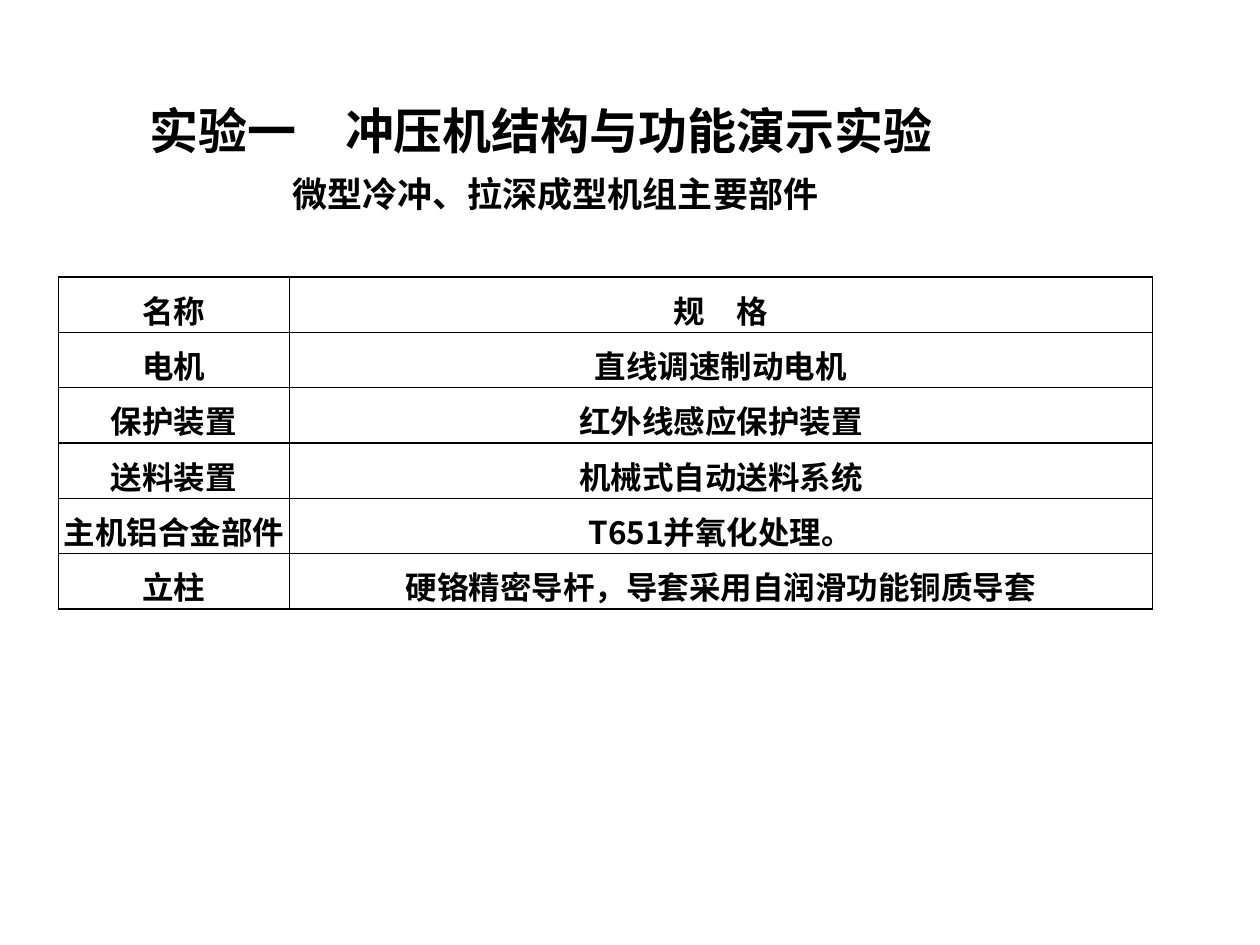
import pptx
import pptx.util
import pptx.dml.color
import pptx.enum.text
import pptx.oxml
import pptx.oxml.ns

Pt = pptx.util.Pt
FONT = "Noto Sans CJK SC"
NAMESPACE = pptx.oxml.ns.nsdecls("a")


def color(value):
    return pptx.dml.color.RGBColor.from_string(value)


def write(para, text, size):
    span = para.add_run()
    span.text = text
    for name, value in {"name": FONT, "size": Pt(size), "bold": True}.items():
        setattr(span.font, name, value)
    span.font.color.rgb = color("000000")
    span.font._element.append(
        pptx.oxml.parse_xml(f'<a:ea {NAMESPACE} typeface="{FONT}"/>'))


deck = pptx.Presentation()
deck.slide_width, deck.slide_height = Pt(720), Pt(540)
page = deck.slides.add_slide(deck.slide_layouts[6])

headings = [
    ("微型冷冲、拉深成型机组主要部件", 20, (160, 95, 400, 31.5), 0),
    ("实验一　冲压机结构与功能演示实验", 28, (48, 54, 624, 41), 30.24),
]
for text, size, place, indent in headings:
    box = page.shapes.add_textbox(*map(Pt, place))
    box.text_frame.word_wrap = True
    para = box.text_frame.paragraphs[0]
    para._p.get_or_add_pPr().set("indent", str(Pt(indent)))
    write(para, text, size)

parts = [
    ("名称", "规　格"),
    ("电机", "直线调速制动电机"),
    ("保护装置", "红外线感应保护装置"),
    ("送料装置", "机械式自动送料系统"),
    ("主机铝合金部件", "T651并氧化处理。"),
    ("立柱", "硬铬精密导杆，导套采用自润滑功能铜质导套"),
]
widths = [132, 493]
row_height = 31.6
cell_format = {
    "margin_left": 0,
    "margin_top": Pt(5),
    "margin_right": 0,
    "margin_bottom": 0,
    "vertical_anchor": pptx.enum.text.MSO_ANCHOR.BOTTOM,
}

table = page.shapes.add_table(
    len(parts), len(widths), Pt(33.4), Pt(158.4),
    Pt(sum(widths)), Pt(row_height * len(parts))).table
table.first_row = table.horz_banding = False
for column, width in zip(table.columns, widths):
    column.width = Pt(width)

for row, texts in zip(table.rows, parts):
    row.height = Pt(row_height)
    for index, (cell, text) in enumerate(zip(row.cells, texts)):
        for name, value in cell_format.items():
            setattr(cell, name, value)
        para = cell.text_frame.paragraphs[0]
        para.alignment = pptx.enum.text.PP_ALIGN.CENTER
        write(para, text, 18)
        for side in ("lnL", "lnR", "lnT", "lnB"):
            outer = side == "lnR" and index == len(widths) - 1
            width, line = (0.75, "000000") if outer else (1, "080000")
            cell._tc.get_or_add_tcPr().append(pptx.oxml.parse_xml(
                f'<a:{side} {NAMESPACE} w="{Pt(width)}"><a:solidFill>'
                f'<a:srgbClr val="{line}"/></a:solidFill></a:{side}>'))
        cell.fill.background()

deck.save("out.pptx")
